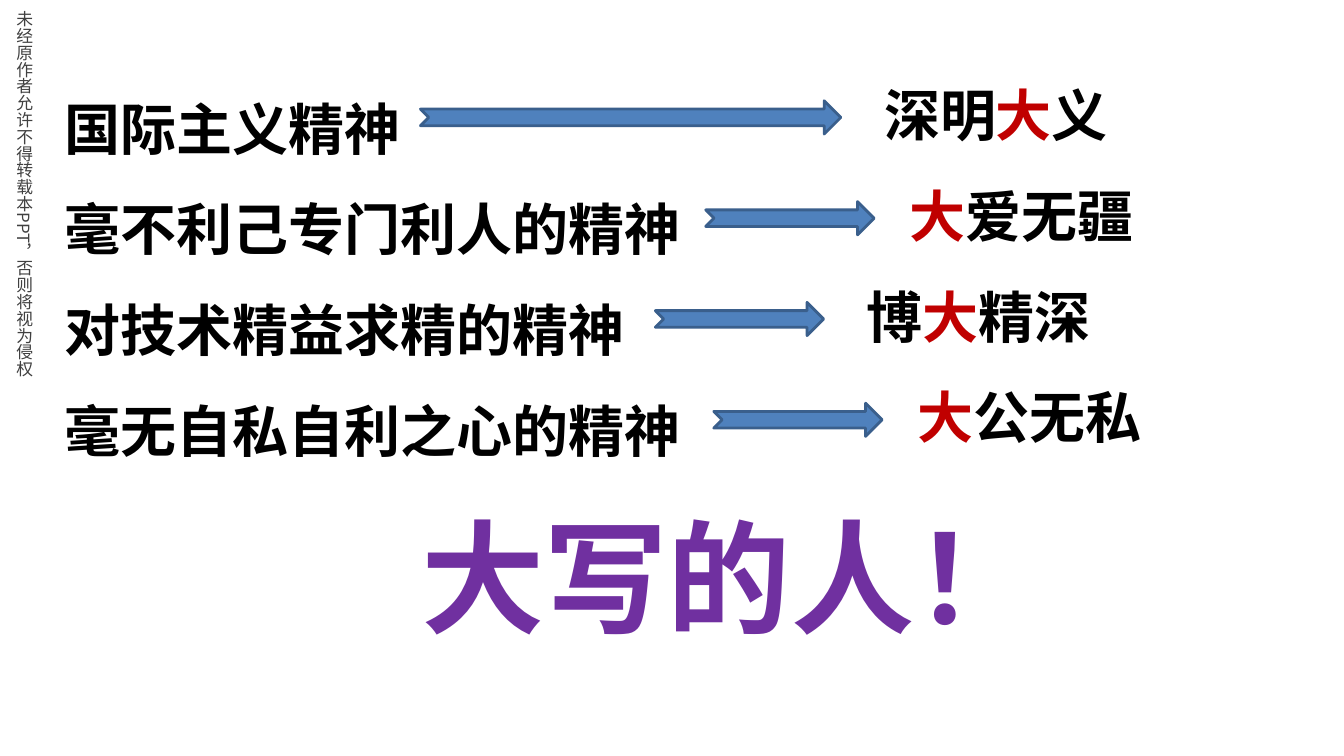
from pptx import Presentation
from pptx.dml.color import RGBColor
from pptx.enum.shapes import MSO_SHAPE as Shape
from pptx.enum.text import MSO_ANCHOR as Anchor, MSO_AUTO_SIZE as AutoSize, PP_ALIGN as Align
from pptx.oxml.ns import qn
from pptx.util import Inches, Pt

BLACK = RGBColor(0x00, 0x00, 0x00)
GREY = RGBColor(0x40, 0x40, 0x40)
RED = RGBColor(0xC0, 0x00, 0x00)
PURPLE = RGBColor(0x70, 0x30, 0xA0)
BLUE = RGBColor(0x4F, 0x81, 0xBD)
DARK_BLUE = RGBColor(0x3A, 0x5F, 0x8C)

LATIN_FONT = "Calibri"
CHINESE_FONT = "Noto Sans CJK SC"
KEY_CHARACTER = "大"
NOTICE = "未经原作者允许不得转载本PPT，否则将视为侵权"
CONCLUSION = "大写的人！"

# spirit, arrow left, arrow width, idiom left, idiom
ROWS = [
    ("国际主义精神", 4.17, 4.17, 8.67, "深明大义"),
    ("毫不利己专门利人的精神", 7, 1.67, 8.92, "大爱无疆"),
    ("对技术精益求精的精神", 6.5, 1.67, 8.5, "博大精深"),
    ("毫无自私自利之心的精神", 7.08, 1.67, 9, "大公无私"),
]


def place(shape, left, top, width, height):
    shape.left, shape.top = Inches(left), Inches(top)
    shape.width, shape.height = Inches(width), Inches(height)


def add_run(paragraph, text, size, color, font=CHINESE_FONT, bold=True):
    run = paragraph.add_run()
    run.text = text
    run.font.size = Pt(size)
    run.font.bold = bold
    run.font.color.rgb = color
    run.font.name = font
    east_asian = run.font._element.makeelement(qn("a:ea"), {"typeface": font})
    run.font._element.find(qn("a:latin")).addnext(east_asian)


def remove_bullet(paragraph):
    properties = paragraph._p.get_or_add_pPr()
    properties.set("marL", "0")
    properties.set("indent", "0")
    properties.append(properties.makeelement(qn("a:buNone"), {}))


def add_text_box(slide, left, top, width, height):
    box = slide.shapes.add_textbox(Inches(left), Inches(top), Inches(width), Inches(height))
    box.text_frame.word_wrap = True
    return box.text_frame


def add_notice(slide):
    frame = add_text_box(slide, -0.01, 0.01, 0.5, 7.36)
    frame._txBody.bodyPr.set("vert", "eaVert")
    paragraph = frame.paragraphs[0]
    paragraph.line_spacing = 1.5
    add_run(paragraph, NOTICE, 12, GREY, bold=False)


def fill_spirits(body):
    place(body, 0.59, 0.58, 11.16, 4.09)
    frame = body.text_frame
    frame.auto_size = AutoSize.NONE
    frame.vertical_anchor = Anchor.TOP
    frame.margin_left = frame.margin_right = Inches(0.05)
    frame.margin_top = frame.margin_bottom = Inches(0.02)
    for index, row in enumerate(ROWS):
        paragraph = frame.add_paragraph() if index else frame.paragraphs[0]
        remove_bullet(paragraph)
        paragraph.line_spacing = 1.5
        paragraph.space_before = Pt(0)
        add_run(paragraph, row[0], 40, BLACK, LATIN_FONT)


def add_arrow(slide, left, top, width):
    arrow = slide.shapes.add_shape(
        Shape.NOTCHED_RIGHT_ARROW, Inches(left), Inches(top), Inches(width), Inches(0.33)
    )
    arrow.shadow.inherit = False
    arrow.fill.solid()
    arrow.fill.fore_color.rgb = BLUE
    arrow.line.color.rgb = DARK_BLUE
    arrow.line.width = Pt(2)


def add_idiom(slide, left, top, idiom):
    paragraph = add_text_box(slide, left, top, 3.17, 0.77).paragraphs[0]
    before, key, after = idiom.partition(KEY_CHARACTER)
    for text, color in ((before, BLACK), (key, RED), (after, BLACK)):
        if text:
            add_run(paragraph, text, 40, color)


def fill_conclusion(title):
    place(title, 4.08, 4.92, 5.58, 1.58)
    frame = title.text_frame
    frame.auto_size = AutoSize.NONE
    frame.vertical_anchor = Anchor.TOP
    paragraph = frame.paragraphs[0]
    paragraph.alignment = Align.LEFT
    add_run(paragraph, CONCLUSION, 88, PURPLE)


def main():
    presentation = Presentation()
    presentation.slide_width = Inches(13.33)
    presentation.slide_height = Inches(7.5)
    slide = presentation.slides.add_slide(presentation.slide_layouts[1])

    add_notice(slide)
    fill_spirits(slide.placeholders[1])
    for index, (_, arrow_left, arrow_width, idiom_left, idiom) in enumerate(ROWS):
        add_arrow(slide, arrow_left, 1 + index, arrow_width)
        add_idiom(slide, idiom_left, 0.75 + index, idiom)
    fill_conclusion(slide.shapes.title)

    presentation.save("out.pptx")


if __name__ == "__main__":
    main()
